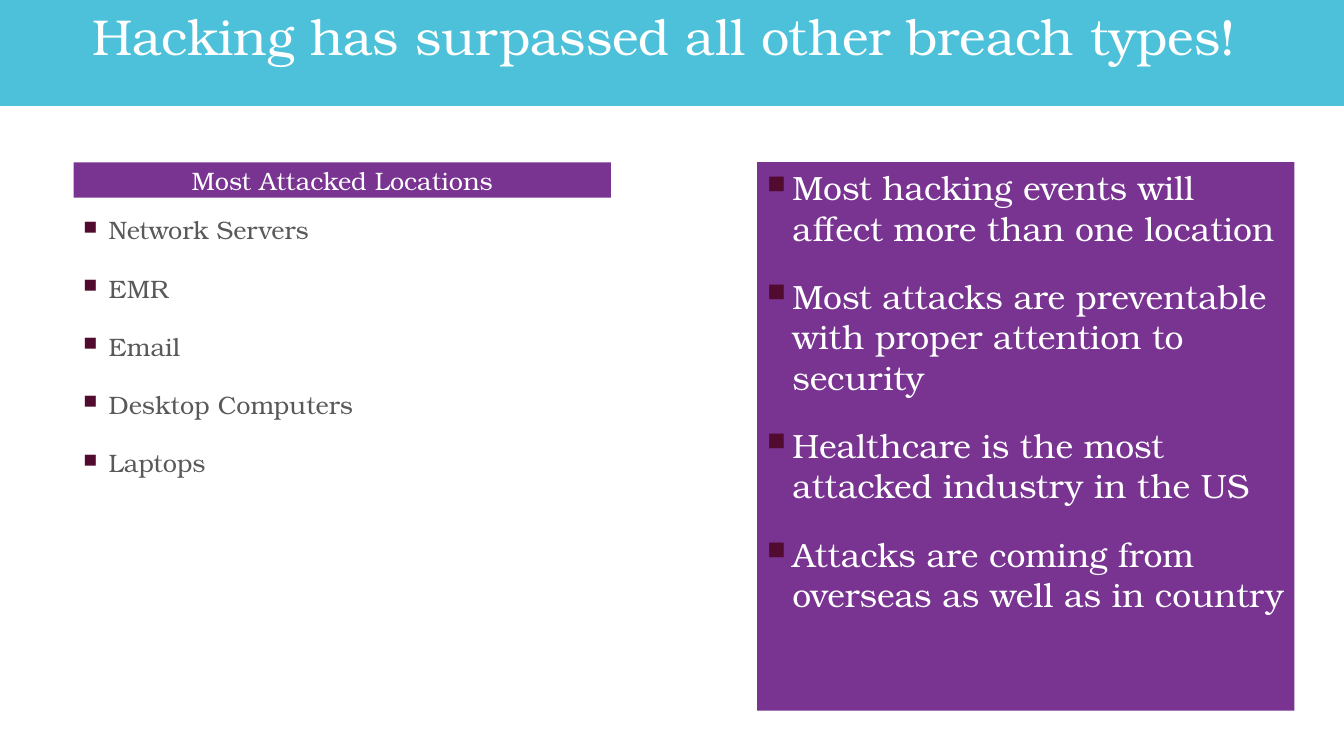
from dataclasses import dataclass

from lxml import etree
from pptx import Presentation
from pptx.dml.color import RGBColor
from pptx.enum.shapes import MSO_SHAPE
from pptx.enum.text import MSO_ANCHOR, PP_ALIGN
from pptx.oxml.ns import qn
from pptx.util import Inches, Pt

RECTANGLE = MSO_SHAPE.RECTANGLE
TOP, MIDDLE = MSO_ANCHOR.TOP, MSO_ANCHOR.MIDDLE
LEFT, CENTER = PP_ALIGN.LEFT, PP_ALIGN.CENTER


@dataclass(frozen=True)
class Theme:
    font: str = "TeX Gyre Bonum"
    banner: str = "4EC1DA"
    panel: str = "793391"
    bullet: str = "500B2E"
    light: str = "FFFFFF"
    dark: str = "595959"
    title_size: int = 36
    large_size: int = 24
    body_size: int = 18
    bullet_gap: int = 20


THEME = Theme()


@dataclass(frozen=True)
class Block:
    left: float
    top: float
    width: float
    height: float
    lines: tuple[str, ...]
    size: int
    color: str = THEME.light
    fill: str | None = None
    bulleted: bool = False
    anchor: MSO_ANCHOR = TOP
    inset: float = 0.05


COLUMN_WIDTH = 5.33
LEFT_COLUMN, RIGHT_COLUMN = 0.73, 7.51
CONTENT_TOP = 1.61

BLOCKS = (
    Block(0, 0, 13.33, 1.05, ("Hacking has surpassed all other breach types! ",),
          THEME.title_size, fill=THEME.banner),
    Block(LEFT_COLUMN, 2.08, COLUMN_WIDTH, 4.02,
          ("Network Servers", "EMR", "Email", "Desktop Computers", "Laptops"),
          THEME.body_size, color=THEME.dark, bulleted=True),
    Block(RIGHT_COLUMN, CONTENT_TOP, COLUMN_WIDTH, 5.44,
          ("Most hacking events will affect more than one location",
           "Most attacks are preventable with proper attention to security",
           "Healthcare is the most attacked industry in the US",
           "Attacks are coming from overseas as well as in country"),
          THEME.large_size, fill=THEME.panel, bulleted=True),
    Block(LEFT_COLUMN, CONTENT_TOP, COLUMN_WIDTH, 0.35, ("Most Attacked Locations",),
          THEME.body_size, fill=THEME.panel, anchor=MIDDLE, inset=0),
)


def add_bullet(paragraph) -> None:
    """Give the paragraph a small square bullet and a hanging indent."""
    properties = paragraph._p.get_or_add_pPr()
    properties.set("marL", str(Inches(0.25)))
    properties.set("indent", str(Inches(-0.25)))
    color = etree.SubElement(properties, qn("a:buClr"))
    etree.SubElement(color, qn("a:srgbClr"), val=THEME.bullet)
    etree.SubElement(properties, qn("a:buSzPct"), val="75000")
    etree.SubElement(properties, qn("a:buChar"), char="■")


def write_text(paragraph, text: str, *, size: int, color: str,
               bulleted: bool = False, space_before: int = 0) -> None:
    paragraph.alignment = LEFT if bulleted else CENTER
    paragraph.space_before = Pt(space_before)
    if bulleted:
        add_bullet(paragraph)
    run = paragraph.add_run()
    run.text = text
    run.font.name = THEME.font
    run.font.size = Pt(size)
    run.font.color.rgb = RGBColor.from_string(color)


def add_block(slide, block: Block) -> None:
    bounds = [Inches(length) for length in (block.left, block.top, block.width, block.height)]
    if block.fill:
        shape = slide.shapes.add_shape(RECTANGLE, *bounds)
        shape.shadow.inherit = False
        shape.fill.solid()
        shape.fill.fore_color.rgb = RGBColor.from_string(block.fill)
        shape.line.fill.background()
    else:
        shape = slide.shapes.add_textbox(*bounds)
    frame = shape.text_frame
    frame.word_wrap = True
    frame.vertical_anchor = block.anchor
    frame.margin_left = frame.margin_right = Inches(0.1)
    frame.margin_top = frame.margin_bottom = Inches(block.inset)
    for index, line in enumerate(block.lines):
        paragraph = frame.add_paragraph() if index else frame.paragraphs[0]
        write_text(paragraph, line, size=block.size, color=block.color,
                   bulleted=block.bulleted,
                   space_before=THEME.bullet_gap if index else 0)


def main() -> None:
    presentation = Presentation()
    presentation.slide_width = Inches(13.33)
    presentation.slide_height = Inches(7.5)
    slide = presentation.slides.add_slide(presentation.slide_layouts[6])
    for block in BLOCKS:
        add_block(slide, block)
    presentation.save("out.pptx")


if __name__ == "__main__":
    main()
